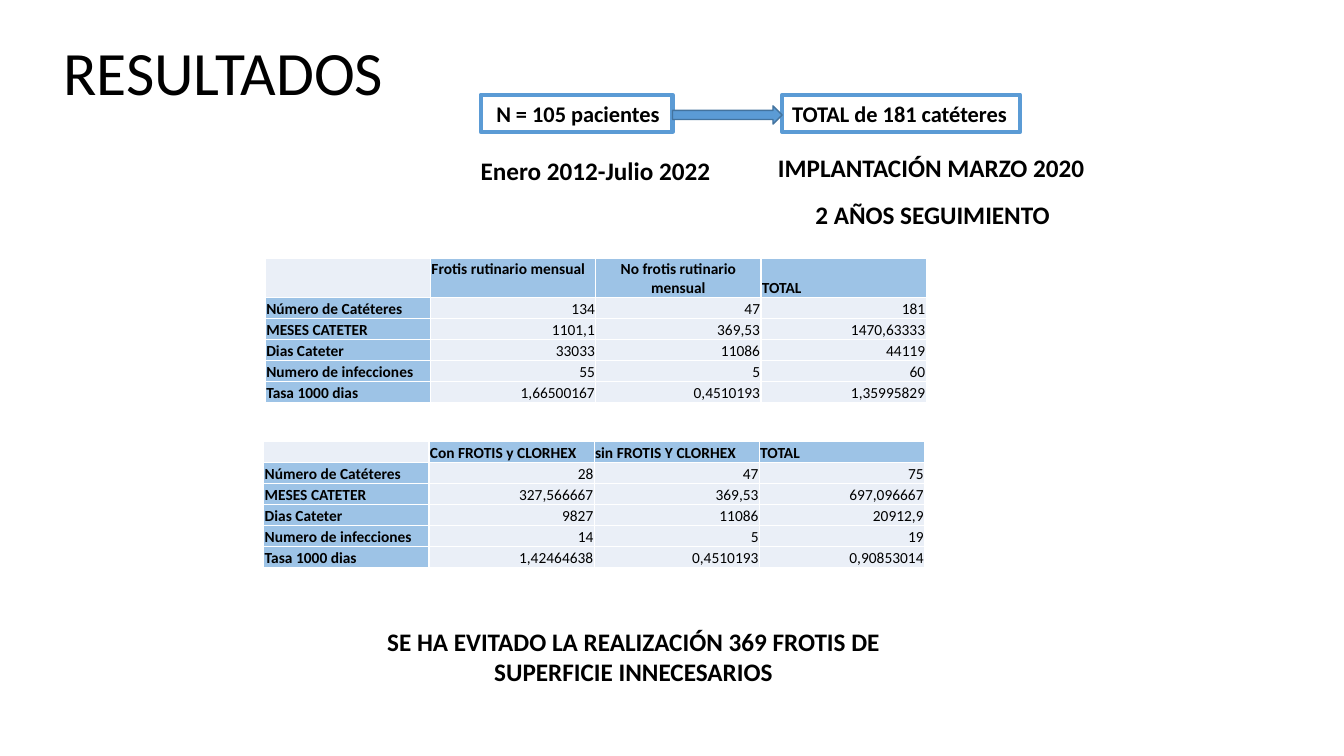
from pptx import Presentation
from pptx.dml.color import RGBColor
from pptx.enum.shapes import MSO_SHAPE as Shape
from pptx.enum.text import MSO_ANCHOR as Anchor, PP_ALIGN as Align
from pptx.util import Pt

COLORS = {
    "text": "000000", "box": "FFFFFF", "accent": "5B9BD5",
    "arrow_line": "43739E", "label": "9DC3E6", "value": "EAEFF7",
}
FONT = "Calibri"
ROW_HEIGHT = 15
COLUMN_WIDTH = 118
ROW_LABELS = ["Número de Catéteres", "MESES CATETER", "Dias Cateter",
              "Numero de infecciones", "Tasa 1000 dias"]
ROUTINE_SWABS = [
    ["", "Frotis rutinario mensual", "No frotis rutinario mensual", "TOTAL"],
    ["134", "47", "181"],
    ["1101,1", "369,53", "1470,63333"],
    ["33033", "11086", "44119"],
    ["55", "5", "60"],
    ["1,66500167", "0,4510193", "1,35995829"],
]
CHLORHEXIDINE = [
    ["", "Con FROTIS y CLORHEX", "sin FROTIS Y CLORHEX", "TOTAL"],
    ["28", "47", "75"],
    ["327,566667", "369,53", "697,096667"],
    ["9827", "11086", "20912,9"],
    ["14", "5", "19"],
    ["1,42464638", "0,4510193", "0,90853014"],
]


def color(name):
    """Return the named colour."""
    return RGBColor.from_string(COLORS[name])


def style(paragraph, size, bold=True, align=Align.LEFT):
    """Format a whole paragraph."""
    paragraph.alignment = align
    paragraph.font.name = FONT
    paragraph.font.size = Pt(size)
    paragraph.font.bold = bold
    paragraph.font.color.rgb = color("text")


def place(box):
    """Convert left, top, width and height to points."""
    return [Pt(length) for length in box]


def add_title(slide, text, box):
    """Fill and position the title placeholder."""
    title = slide.shapes.title
    title.left, title.top, title.width, title.height = place(box)
    title.text_frame.text = text
    title.text_frame.vertical_anchor = Anchor.MIDDLE
    style(title.text_frame.paragraphs[0], 44, bold=False)
    title.text_frame.paragraphs[0].line_spacing = 0.9


def add_note(slide, text, box, wrap=False, align=Align.LEFT):
    """Add a bold free-standing text."""
    frame = slide.shapes.add_textbox(*place(box)).text_frame
    frame.word_wrap = wrap
    frame.text = text
    style(frame.paragraphs[0], 18, align=align)


def add_filled(slide, kind, box, fill, line, line_width):
    """Add a preset shape with a fill and an outline."""
    shape = slide.shapes.add_shape(kind, *place(box))
    shape.shadow.inherit = False
    shape.fill.solid()
    shape.fill.fore_color.rgb = color(fill)
    shape.line.color.rgb = color(line)
    shape.line.width = Pt(line_width)
    return shape


def add_count(slide, runs, box):
    """Add an outlined box and return its paragraph."""
    frame = add_filled(slide, Shape.RECTANGLE, box, "box", "accent", 3).text_frame
    frame.word_wrap = False
    count = frame.paragraphs[0]
    for text in runs:
        count.add_run().text = text
    style(count, 16)
    return count


def fill_cell(cell, text, is_label, align):
    """Write one table cell."""
    cell.margin_left = cell.margin_right = cell.margin_top = Pt(0.6)
    cell.margin_bottom = 0
    cell.vertical_anchor = Anchor.BOTTOM
    cell.fill.solid()
    cell.fill.fore_color.rgb = color("label" if is_label and text else "value")
    cell.text = text
    style(cell.text_frame.paragraphs[0], 11, is_label, align)


def add_results(slide, results, left, top, header_height):
    """Add a results table and return it."""
    rows = [results[0]] + [[label] + values
                           for label, values in zip(ROW_LABELS, results[1:])]
    columns = len(rows[0])
    height = header_height + ROW_HEIGHT * len(ROW_LABELS)
    box = place((left, top, COLUMN_WIDTH * columns, height))
    table = slide.shapes.add_table(len(rows), columns, *box).table
    table.first_row = table.horz_banding = False
    for r, row in enumerate(rows):
        table.rows[r].height = Pt(ROW_HEIGHT if r else header_height)
        for c, text in enumerate(row):
            is_label = r == 0 or c == 0
            fill_cell(table.cell(r, c), text, is_label,
                      Align.LEFT if is_label else Align.RIGHT)
    return table


def main():
    """Build the results slide."""
    deck = Presentation()
    deck.slide_width, deck.slide_height = Pt(960), Pt(540)
    slide = deck.slides.add_slide(deck.slide_layouts[5])
    add_title(slide, "RESULTADOS", (38, 2, 828, 104.4))

    routine = add_results(slide, ROUTINE_SWABS, 189.6, 184.6, 27.5)
    routine.cell(0, 1).vertical_anchor = Anchor.TOP
    routine.cell(0, 2).text_frame.paragraphs[0].alignment = Align.CENTER

    patients = add_count(slide, [" ", "N = 105 pacientes"], (343.4, 67.7, 137, 26.6))
    patients.runs[0].font.name = "Times New Roman"
    add_count(slide, ["TOTAL de 181 catéteres"], (558.7, 67.7, 170, 26.6))
    add_note(slide, "Enero 2012-Julio 2022", (336.2, 107.5, 178.6, 29))
    add_filled(slide, Shape.RIGHT_ARROW, (480.4, 75.6, 78.3, 13),
               "accent", "arrow_line", 1)
    add_note(slide, "IMPLANTACIÓN MARZO 2020", (548.6, 105.4, 235.4, 29))
    add_note(slide, "2 AÑOS SEGUIMIENTO", (575.3, 139, 183.6, 29))

    add_results(slide, CHLORHEXIDINE, 188.5, 315.4, ROW_HEIGHT)
    add_note(slide, "SE HA EVITADO LA REALIZACIÓN 369 FROTIS DE SUPERFICIE INNECESARIOS",
             (263.5, 443.5, 378, 51), wrap=True, align=Align.CENTER)
    deck.save("out.pptx")


if __name__ == "__main__":
    main()
